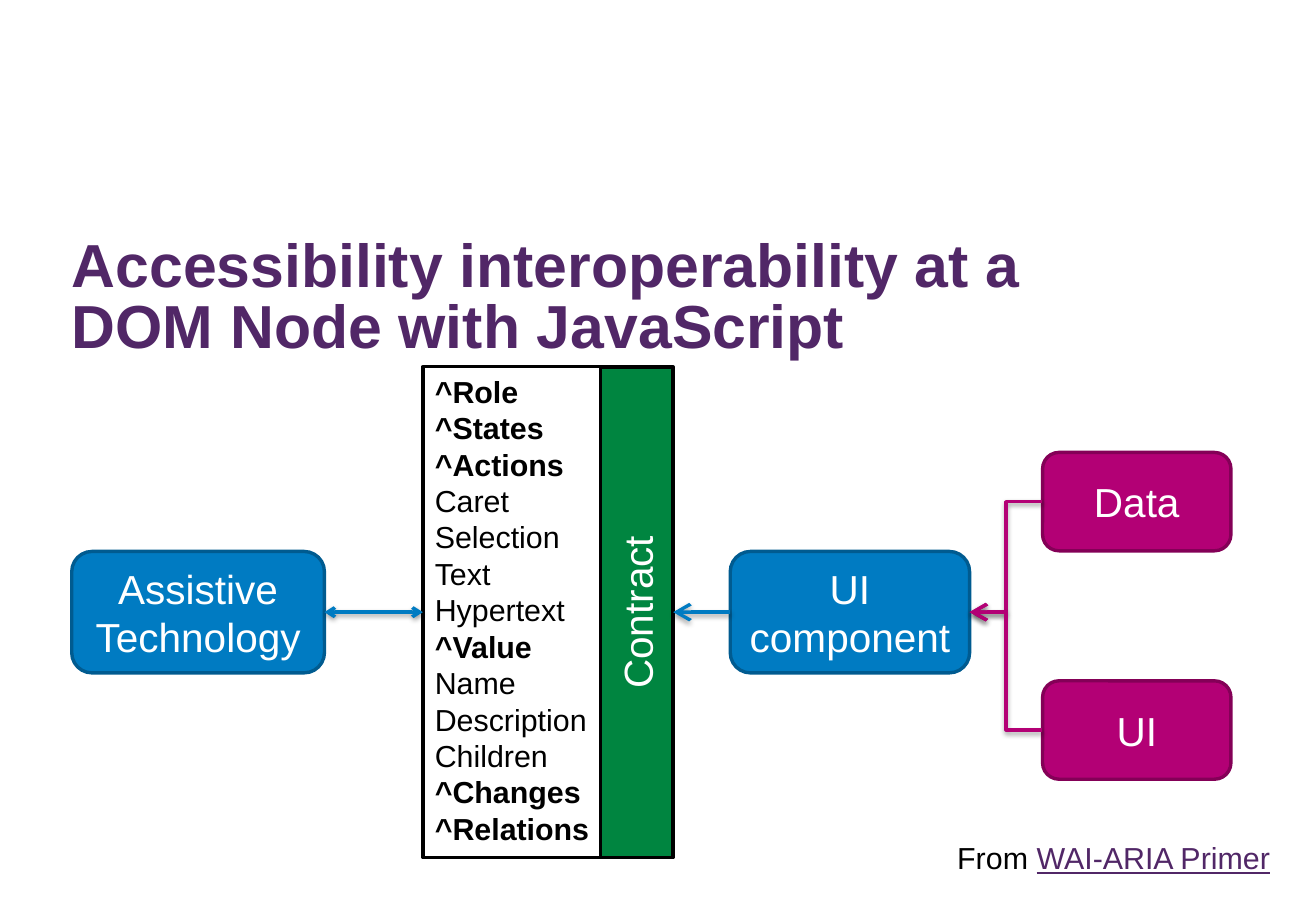
from lxml.etree import SubElement
from pptx import Presentation
from pptx.dml.color import RGBColor
from pptx.enum.shapes import MSO_CONNECTOR as LINK, MSO_SHAPE as FORM
from pptx.enum.text import MSO_ANCHOR, PP_ALIGN
from pptx.oxml.ns import qn
from pptx.util import Inches, Pt

THEME = dict(
    font="Arial", title=36, label=24, body=18, line=2,
    purple="512767", blue="007BC2", navy="005B90", pink="B30075",
    wine="840057", green="008540", black="000000", white="FFFFFF",
)
WIDE, HIGH = 10.83, 7.5
LEFT, MID = 0.59, 5.04  # left margin and the row of the main flow


def color(name):
    return RGBColor.from_string(THEME[name])


def write(frame, lines, size, ink, align=PP_ALIGN.LEFT):
    """Fill a text frame, one paragraph a line; a leading ^ makes it bold."""
    for i, text in enumerate(lines):
        para = frame.paragraphs[0] if i == 0 else frame.add_paragraph()
        para.text = text
        para.alignment = align
        para.font.name = THEME["font"]
        para.font.size = Pt(THEME[size])
        para.font.bold = text.startswith("^")
        para.font.color.rgb = color(ink)


deck = Presentation()
deck.slide_width, deck.slide_height = Inches(WIDE), Inches(HIGH)
slide = deck.slides.add_slide(deck.slide_layouts[6])
shapes = slide.shapes

# Title
title = shapes.add_textbox(Inches(LEFT), Inches(1.97), Inches(7.99), Inches(1.02)).text_frame
title.word_wrap = True
title.margin_left = title.margin_right = title.margin_top = title.margin_bottom = 0
write(title, ["Accessibility interoperability at a DOM Node with JavaScript"], "title", "purple")
title.paragraphs[0].font.bold = True
title.paragraphs[0].line_spacing = Pt(THEME["title"])

# Boxes: key, form, left, middle row, width, height, fill, edge, lines
facts = ["^Role", "^States", "^Actions", "Caret", "Selection", "Text", "Hypertext",
         "^Value", "Name", "Description", "Children", "^Changes", "^Relations"]
ROUND, RECT = FORM.ROUNDED_RECTANGLE, FORM.RECTANGLE
boxes = {}
for key, form, left, row, wide, high, fill, edge, lines in [
    ("tech", ROUND, LEFT, MID, 2.08, 1, "blue", "navy", ["Assistive Technology"]),
    ("part", ROUND, 6.01, MID, 1.97, 1, "blue", "navy", ["UI", "component"]),
    ("data", ROUND, 8.58, 4.13, 1.55, 0.81, "pink", "wine", ["Data"]),
    ("view", ROUND, 8.58, 6.01, 1.55, 0.81, "pink", "wine", ["UI"]),
    ("facts", RECT, 3.48, MID, 1.49, 4.04, "white", "black", facts),
    ("pact", RECT, 3.22, MID, 4.04, 0.6, "green", "black", ["Contract"]),
]:
    box = shapes.add_shape(form, Inches(left), Inches(row - high / 2), Inches(wide), Inches(high))
    box.shadow.inherit = False
    box.fill.solid()
    box.fill.fore_color.rgb = color(fill)
    box.line.color.rgb = color(edge)
    box.line.width = Pt(THEME["line"])
    frame = box.text_frame
    if key == "facts":
        frame.word_wrap = False
        frame.vertical_anchor = MSO_ANCHOR.TOP
        write(frame, lines, "body", "black")
    else:
        frame.word_wrap = True
        frame.vertical_anchor = MSO_ANCHOR.MIDDLE
        write(frame, lines, "label", "white", PP_ALIGN.CENTER)
    boxes[key] = box
boxes["pact"].rotation = 270

# Arrows: form, start box and side, end box and side, colour, arrowheads, head size
for form, start, out, end, side, ink, heads, size in [
    (LINK.ELBOW, "data", 1, "part", 3, "pink", ["tailEnd"], "lg"),
    (LINK.ELBOW, "view", 1, "part", 3, "pink", ["tailEnd"], "lg"),
    (LINK.STRAIGHT, "part", 1, "pact", 2, "blue", ["tailEnd"], "lg"),
    (LINK.STRAIGHT, "tech", 3, "facts", 1, "blue", ["headEnd", "tailEnd"], "med"),
]:
    arrow = shapes.add_connector(form, 0, 0, 0, 0)
    arrow.begin_connect(boxes[start], out)
    arrow.end_connect(boxes[end], side)
    if end == "pact":  # its bottom side faces right once turned
        arrow.end_x, arrow.end_y = Inches(5.54), Inches(MID)
    arrow.line.color.rgb = color(ink)
    arrow.line.width = Pt(THEME["line"])
    props = arrow._element.spPr
    for head in heads:
        SubElement(props.find(qn("a:ln")), qn("a:" + head), type="arrow", w=size, len=size)
    shade = SubElement(SubElement(props, qn("a:effectLst")), qn("a:outerShdw"),
                       blurRad=str(Pt(3.1)), dist=str(Pt(1.6)), dir="5400000", rotWithShape="0")
    tint = SubElement(shade, qn("a:srgbClr"), val=THEME["black"])
    SubElement(tint, qn("a:alpha"), val="38000")

# Source line
source = shapes.add_textbox(Inches(LEFT), Inches(6.86), Inches(9.96), Inches(0.4)).text_frame
source.word_wrap = True
write(source, ["From "], "body", "black", PP_ALIGN.RIGHT)
name = source.paragraphs[0].add_run()
name.text = "WAI-ARIA Primer"
name.font.underline = True
name.font.color.rgb = color("purple")

deck.save("out.pptx")
